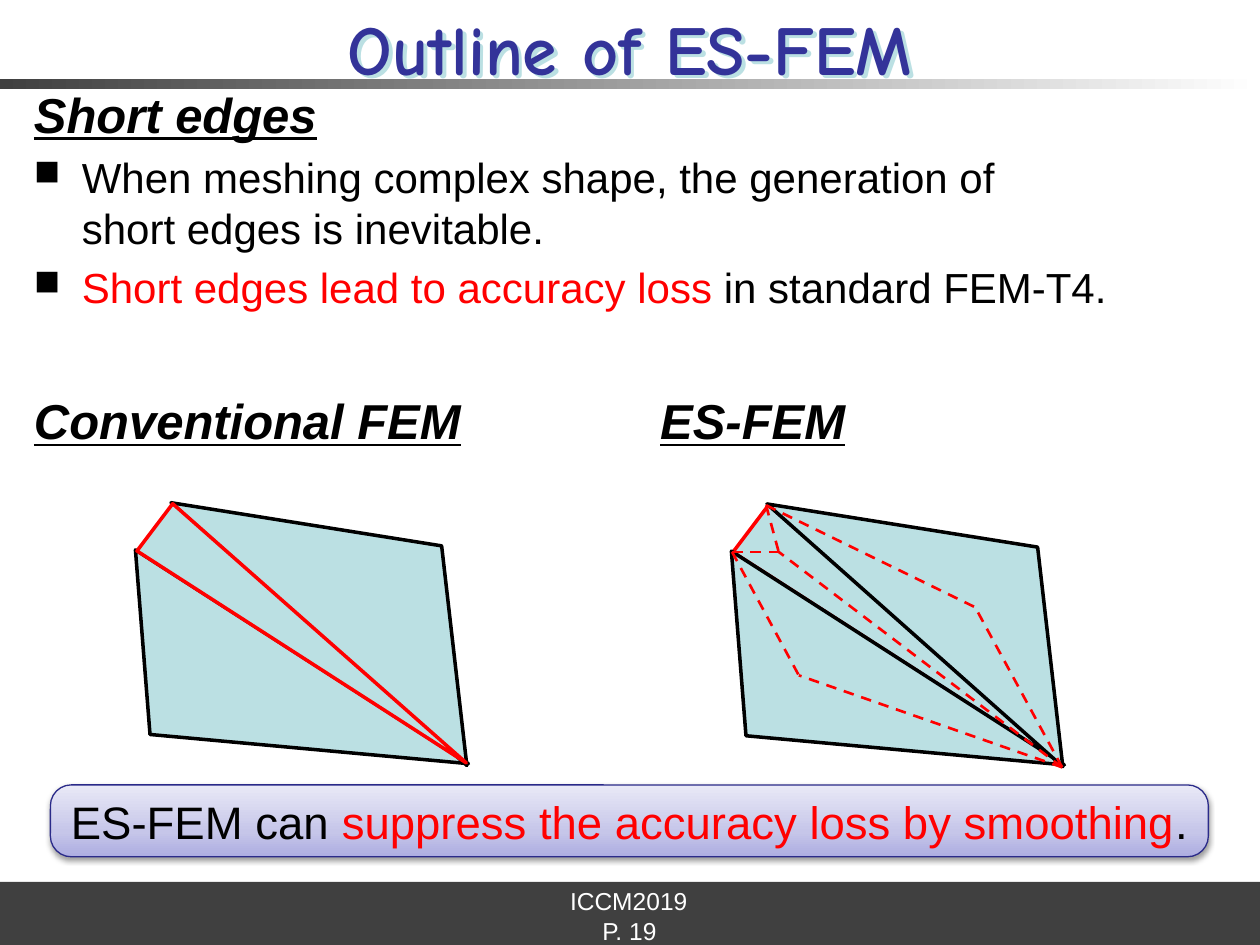
from lxml.etree import SubElement
from pptx import Presentation
from pptx.dml.color import RGBColor
from pptx.enum.dml import MSO_LINE_DASH_STYLE as Dash
from pptx.enum.shapes import MSO_CONNECTOR as Connector, MSO_SHAPE as Shape
from pptx.enum.text import MSO_ANCHOR as Anchor, PP_ALIGN as Align
from pptx.oxml.ns import qn
from pptx.util import Inches, Pt

BLACK = RGBColor(0x00, 0x00, 0x00)
WHITE = RGBColor(0xFF, 0xFF, 0xFF)
RED = RGBColor(0xFF, 0x00, 0x00)
GRAY = RGBColor(0x40, 0x40, 0x40)
NAVY = RGBColor(0x33, 0x33, 0x99)
BOX_LINE = RGBColor(0x2A, 0x2A, 0x89)
PALE_BLUE = RGBColor(0xBB, 0xE0, 0xE3)
LILAC = [(0, RGBColor(0xAD, 0xAD, 0xE1)), (35, RGBColor(0xC6, 0xC6, 0xE9)), (100, RGBColor(0xE9, 0xE9, 0xF7))]

TITLE = {"name": "Comic Neue", "size": Pt(40), "bold": True}
HEADING = {"name": "Arial", "size": Pt(28), "bold": True, "italic": True, "underline": True}
BODY = {"name": "Arial", "size": Pt(24)}
MESSAGE = {"name": "Arial", "size": Pt(26)}
FOOTER = {"name": "Arial", "size": Pt(14)}

SLIVER = ((2.23, 3.57, 0.47, 3.1), 127.1, 0.5, RED)
LOWER = ((0.51, 5.12, 3.14, 1.17), 212.7, 0.717, BLACK)
UPPER = ((1.35, 4.01, 3.14, 1.17), 41.6, 0.584, BLACK)
MESH_SHIFT = (4.73, 0.01)

SHORT_TOP, SHORT_BOTTOM, FAR_CORNER = (6.08, 4.01), (5.81, 4.38), (8.43, 6.09)
CENTROIDS = [
    ((6.18, 4.38), (SHORT_TOP, SHORT_BOTTOM, FAR_CORNER)),
    ((6.34, 5.36), (SHORT_BOTTOM, FAR_CORNER)),
    ((7.74, 4.82), (SHORT_TOP, FAR_CORNER)),
]


def inches(values):
    return [Inches(value) for value in values]


def add_color(parent, color):
    return SubElement(parent, qn("a:srgbClr"), val=str(color))


def add_run(paragraph, text, style, color):
    for index, line in enumerate(text.split("\n")):
        if index:
            paragraph.add_line_break()
        run = paragraph.add_run()
        run.text = line
        for name, value in style.items():
            setattr(run.font, name, value)
        run.font.color.rgb = color


def format_frame(frame, margins, **values):
    for side, margin in zip(("left", "top", "right", "bottom"), margins):
        setattr(frame, f"margin_{side}", Inches(margin))
    for name, value in values.items():
        setattr(frame, name, value)


def add_shadow(shape, color, opacity, blur, distance, angle):
    effects = SubElement(shape._element.spPr, qn("a:effectLst"))
    shadow = SubElement(effects, qn("a:outerShdw"), blurRad=str(Pt(blur)), dist=str(Pt(distance)),
                        dir=str(angle * 60000), algn="ctr", rotWithShape="0")
    SubElement(add_color(shadow, color), qn("a:alpha"), val=str(opacity * 1000))


def add_box(slide, kind, place):
    shape = slide.shapes.add_shape(kind, *inches(place))
    shape.shadow.inherit = False
    shape.line.fill.background()
    return shape


def set_gradient(shape, stops, angle):
    shape.fill.gradient()
    shape.fill.gradient_angle = angle
    stop_list = shape._element.spPr.find(qn("a:gradFill")).find(qn("a:gsLst"))
    for stop in list(stop_list):
        stop_list.remove(stop)
    for position, color in stops:
        add_color(SubElement(stop_list, qn("a:gs"), pos=str(position * 1000)), color)


def set_line(shape, color, width):
    shape.line.color.rgb = color
    shape.line.width = Pt(width)


def add_bars(slide):
    set_gradient(add_box(slide, Shape.RECTANGLE, (0, 0.63, 10, 0.08)), [(0, GRAY), (100, WHITE)], 0)
    footer = add_box(slide, Shape.RECTANGLE, (0, 7, 10, 0.5))
    footer.fill.solid()
    footer.fill.fore_color.rgb = GRAY


def add_footer_text(slide, text, place):
    frame = slide.shapes.add_textbox(*inches(place)).text_frame
    format_frame(frame, [0.04] * 4, word_wrap=False, vertical_anchor=Anchor.MIDDLE)
    frame.paragraphs[0].alignment = Align.CENTER
    add_run(frame.paragraphs[0], text, FOOTER, WHITE)


def set_title(slide, text):
    title = slide.shapes.title
    title.left, title.top, title.width, title.height = inches((0, 0.04, 10, 0.68))
    format_frame(title.text_frame, [0] * 4, vertical_anchor=Anchor.TOP)
    paragraph = title.text_frame.paragraphs[0]
    paragraph.alignment = Align.CENTER
    add_run(paragraph, text, TITLE, NAVY)
    add_shadow(title, PALE_BLUE, 100, 0, 3, 45)


def add_bullet(frame, runs):
    paragraph = frame.add_paragraph()
    properties = paragraph._p.get_or_add_pPr()
    properties.set("marL", str(Inches(0.38)))
    properties.set("indent", str(Inches(-0.38)))
    add_color(SubElement(properties, qn("a:buClr")), BLACK)
    SubElement(properties, qn("a:buSzPct"), val="85000")
    SubElement(properties, qn("a:buChar"), char="■")
    paragraph.space_before = Pt(5)
    for text, color in runs:
        add_run(paragraph, text, BODY, color)


def add_body(slide):
    frame = slide.shapes.add_textbox(*inches((0.27, 0.67, 9.44, 6.3))).text_frame
    format_frame(frame, [0] * 4, word_wrap=True)
    add_run(frame.paragraphs[0], "Short edges", HEADING, BLACK)
    add_bullet(frame, [("When meshing complex shape, the generation of\nshort edges is inevitable.", BLACK)])
    add_bullet(frame, [("Short edges lead to accuracy loss ", RED), ("in standard FEM-T4.", BLACK)])
    columns = frame.add_paragraph()
    tabs = SubElement(columns._p.get_or_add_pPr(), qn("a:tabLst"))
    SubElement(tabs, qn("a:tab"), pos=str(Inches(4.97)), algn="l")
    columns.space_before = Pt(45)
    add_run(columns, "Conventional FEM", HEADING, BLACK)
    add_run(columns, "\t", BODY, BLACK)
    add_run(columns, "ES-FEM", HEADING, BLACK)


def add_mesh(slide, triangles, shift=(0, 0)):
    for (left, top, width, height), rotation, apex, color in triangles:
        triangle = add_box(slide, Shape.ISOSCELES_TRIANGLE, (left + shift[0], top + shift[1], width, height))
        triangle.rotation = rotation
        triangle.adjustments[0] = apex
        triangle.fill.solid()
        triangle.fill.fore_color.rgb = PALE_BLUE
        set_line(triangle, color, 2)


def add_dashed_line(slide, start, end):
    line = slide.shapes.add_connector(Connector.STRAIGHT, *inches(start + end))
    set_line(line, RED, 1.5)
    line.line.dash_style = Dash.DASH
    SubElement(line._element.spPr, qn("a:effectLst"))


def add_message(slide):
    box = add_box(slide, Shape.ROUNDED_RECTANGLE, (0.4, 6.23, 9.19, 0.57))
    box.adjustments[0] = 0.29
    set_gradient(box, LILAC, 90)
    set_line(box, BOX_LINE, 0.75)
    box._element.spPr.remove(box._element.spPr.find(qn("a:effectLst")))
    add_shadow(box, BLACK, 38, 3.1, 1.6, 90)
    box.text_frame.vertical_anchor = Anchor.MIDDLE
    paragraph = box.text_frame.paragraphs[0]
    paragraph.alignment = Align.CENTER
    for text, color in [("ES-FEM can ", BLACK), ("suppress the accuracy loss by smoothing", RED), (".", BLACK)]:
        add_run(paragraph, text, MESSAGE, color)


def main():
    presentation = Presentation()
    presentation.slide_width, presentation.slide_height = Inches(10), Inches(7.5)
    slide = presentation.slides.add_slide(presentation.slide_layouts[5])
    add_bars(slide)
    add_footer_text(slide, "ICCM2019", (4.48, 7, 1.02, 0.3))
    add_body(slide)
    set_title(slide, "Outline of ES-FEM")
    add_footer_text(slide, "P. 19", (4.42, 7.28, 1.15, 0.22))
    add_mesh(slide, [LOWER, UPPER, SLIVER])
    add_mesh(slide, [SLIVER, LOWER, UPPER], MESH_SHIFT)
    add_message(slide)
    for centroid, corners in CENTROIDS:
        for corner in corners:
            add_dashed_line(slide, corner, centroid)
    presentation.save("out.pptx")


if __name__ == "__main__":
    main()
